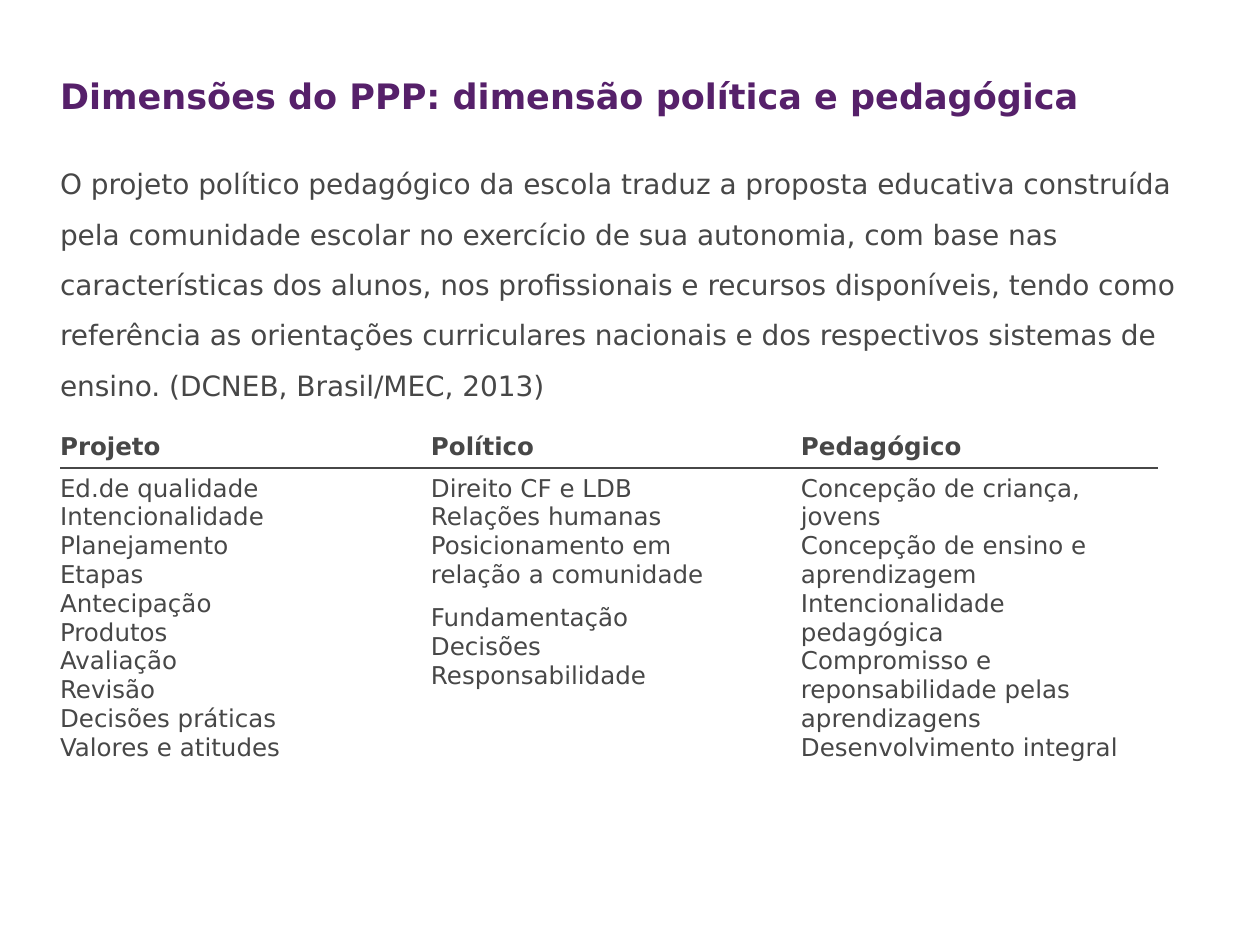
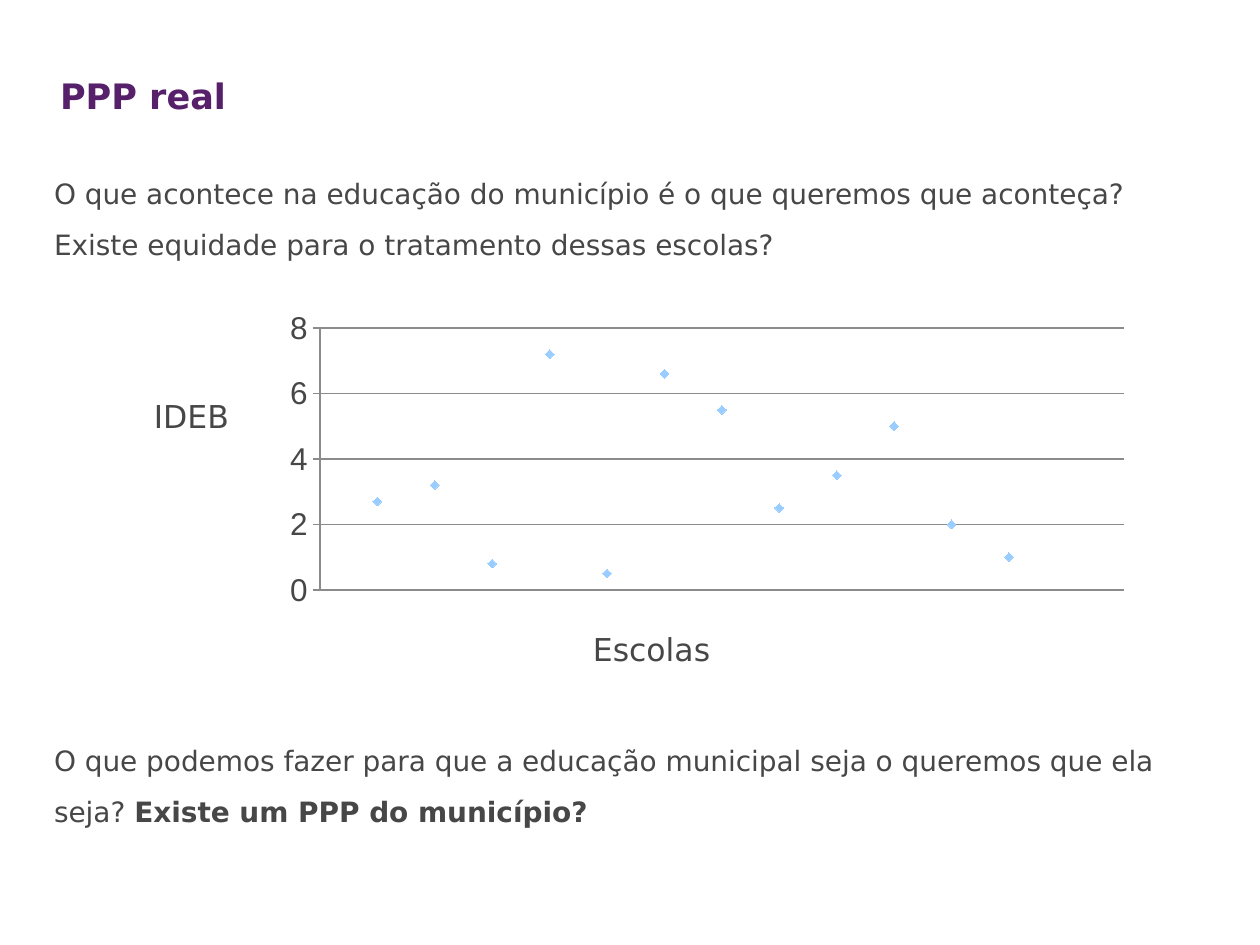
from lxml import etree
from pptx import Presentation, util as u
from pptx.chart.data import XyChartData
from pptx.dml.color import RGBColor
from pptx.enum import chart as ch, text
from pptx.oxml import parse_xml
from pptx.oxml.ns import nsdecls, qn

PURPLE = RGBColor(0x56, 0x20, 0x6A)
GRAY = RGBColor(0x47, 0x47, 0x47)
GRID_GRAY = RGBColor(0x8B, 0x8B, 0x8B)
LIGHT_BLUE = RGBColor(0x99, 0xCC, 0xFF)
FONT = "DejaVu Sans"
PX = 914400 / 126
TITLE_PLACE = (60, 17, 1140, 100)


def px(*lengths):
    return [u.Emu(round(length * PX)) for length in lengths]


def write(frame, paragraphs, size, color=GRAY, spacing=None):
    """Each paragraph is a list of (wording, bold) runs."""
    frame.word_wrap = True
    for index, spans in enumerate(paragraphs):
        para = frame.paragraphs[0] if index == 0 else frame.add_paragraph()
        if spacing:
            para.line_spacing = spacing
        for wording, bold in spans:
            span = para.add_run()
            span.text = wording
            span.font.name = FONT
            span.font.size = u.Pt(size)
            span.font.bold = bold
            span.font.color.rgb = color


# Wording
INTRO = (
    "O projeto político pedagógico da escola traduz a proposta educativa construída "
    "pela comunidade escolar no exercício de sua autonomia, com base nas "
    "características dos alunos, nos profissionais e recursos disponíveis, tendo como "
    "referência as orientações curriculares nacionais e dos respectivos sistemas de "
    "ensino. (DCNEB, Brasil/MEC, 2013)"
)
QUESTION = (
    "O que acontece na educação do município é o que queremos que aconteça? "
    "Existe equidade para o tratamento dessas escolas?"
)
CLOSING = "O que podemos fazer para que a educação municipal seja o queremos que ela seja? "
DIMENSIONS = {
    "Projeto": ["Ed.de qualidade", "Intencionalidade", "Planejamento", "Etapas",
                "Antecipação", "Produtos", "Avaliação", "Revisão",
                "Decisões práticas", "Valores e atitudes"],
    "Político": ["Direito CF e LDB", "Relações humanas",
                 "Posicionamento em relação a comunidade",
                 "Fundamentação", "Decisões", "Responsabilidade"],
    "Pedagógico": ["Concepção de criança, jovens",
                   "Concepção de ensino e aprendizagem",
                   "Intencionalidade pedagógica",
                   "Compromisso e reponsabilidade pelas aprendizagens",
                   "Desenvolvimento integral"],
}
IDEB = [2.7, 3.2, 0.8, 7.2, 0.5, 6.6, 5.5, 2.5, 3.5, 5, 2, 1]

deck = Presentation()
deck.slide_width, deck.slide_height = px(1260, 945)
dimension_page, real_page = [deck.slides.add_slide(deck.slide_layouts[6]) for _ in range(2)]

# Table of the three dimensions
table = dimension_page.shapes.add_table(2, 3, *px(60, 384, 1098, 475)).table
table.first_row = table.horz_banding = False
for column, width in zip(table.columns, px(371, 370, 357)):
    column.width = width
for row, height in zip(table.rows, px(84, 391)):
    row.height = height

RULE = f'<a:solidFill><a:srgbClr val="{GRAY}"/></a:solidFill>'
right_margins = px(13, 50, 13)
for column, (heading, items) in enumerate(DIMENSIONS.items()):
    contents = [([heading], True, "lnB"), (items, False, "lnT")]
    for row, (lines, bold, ruled_edge) in enumerate(contents):
        cell = table.cell(row, column)
        cell.fill.background()
        cell.margin_left = 0
        cell.margin_right = right_margins[column]
        cell.margin_top = cell.margin_bottom = u.Inches(0.05)
        cell.vertical_anchor = text.MSO_ANCHOR.TOP if row else text.MSO_ANCHOR.BOTTOM
        write(cell.text_frame, [[(line, bold)] for line in lines], 14)
        for para in cell.text_frame.paragraphs:
            if para.text == "Fundamentação":
                para.line_spacing = 1.5
        # Only the rule between heading and items is drawn
        for index, edge in enumerate(("lnL", "lnR", "lnT", "lnB")):
            paint = RULE if edge == ruled_edge else "<a:noFill/>"
            cell._tc.get_or_add_tcPr().insert(index, parse_xml(
                f'<a:{edge} {nsdecls("a")} w="12700">{paint}</a:{edge}>'))

# Scatter chart of the schools
data = XyChartData()
schools = data.add_series("Series 1")
for number, score in enumerate(IDEB, 1):
    schools.add_data_point(number, score)
chart = real_page.shapes.add_chart(
    ch.XL_CHART_TYPE.XY_SCATTER, *px(273, 304, 868, 310), data).chart
chart.has_legend = chart.has_title = False
chart.font.name = "Arial"
chart.font.size = u.Pt(18)
chart.font.color.rgb = GRAY

school_axis, score_axis = chart.category_axis, chart.value_axis
school_axis.visible = False
school_axis.has_major_gridlines = False
school_axis.minimum_scale, school_axis.maximum_scale = 0, 14
score_axis.minimum_scale, score_axis.maximum_scale = 0, 8
score_axis.major_unit = 2
score_axis.major_tick_mark = ch.XL_TICK_MARK.OUTSIDE
score_axis.has_major_gridlines = True
for line in (score_axis.format.line, score_axis.major_gridlines.format.line):
    line.color.rgb = GRID_GRAY
    line.width = u.Pt(0.75)

plot = chart.plots[0]
plot.vary_by_categories = False
points = plot.series[0]
points.smooth = False
points.format.line.fill.background()
points.marker.style = ch.XL_MARKER_STYLE.DIAMOND
points.marker.size = 5
points.marker.format.fill.solid()
points.marker.format.fill.fore_color.rgb = LIGHT_BLUE
points.marker.format.line.fill.background()

# Fixed place of the plot inside the chart
area = chart._chartSpace.chart.plotArea
for old in area.findall(qn("c:layout")):
    area.remove(old)
layout = etree.Element(qn("c:layout"))
manual = etree.SubElement(layout, qn("c:manualLayout"))
for tag, value in (("layoutTarget", "inner"), ("xMode", "edge"), ("yMode", "edge"),
                   ("x", 47 / 868), ("y", 24 / 310), ("w", 804 / 868), ("h", 262 / 310)):
    etree.SubElement(manual, qn(f"c:{tag}")).set("val", str(value))
area.insert(0, layout)

# Text boxes, in front: page, place, spans, size, colour, line spacing
BOXES = [
    (dimension_page, TITLE_PLACE,
     [("Dimensões do PPP: dimensão política e pedagógica", True)], 20, PURPLE, None),
    (dimension_page, (60, 150, 1140, 255), [(INTRO, False)], 16, GRAY, 1.5),
    (real_page, TITLE_PLACE, [("PPP real", True)], 20, PURPLE, None),
    (real_page, (54, 160, 1140, 105), [(QUESTION, False)], 16, GRAY, 1.5),
    (real_page, (154, 397, 110, 40), [("IDEB", False)], 18, GRAY, None),
    (real_page, (593, 630, 200, 40), [("Escolas", False)], 18, GRAY, None),
    (real_page, (54, 727, 1140, 105),
     [(CLOSING, False), ("Existe um PPP do município?", True)], 16, GRAY, 1.5),
]
for page, place, spans, size, color, spacing in BOXES:
    frame = page.shapes.add_textbox(*px(*place)).text_frame
    frame.margin_left = frame.margin_top = frame.margin_right = frame.margin_bottom = 0
    if place is TITLE_PLACE:
        frame.vertical_anchor = text.MSO_ANCHOR.BOTTOM
    write(frame, [spans], size, color, spacing)

deck.save("out.pptx")
